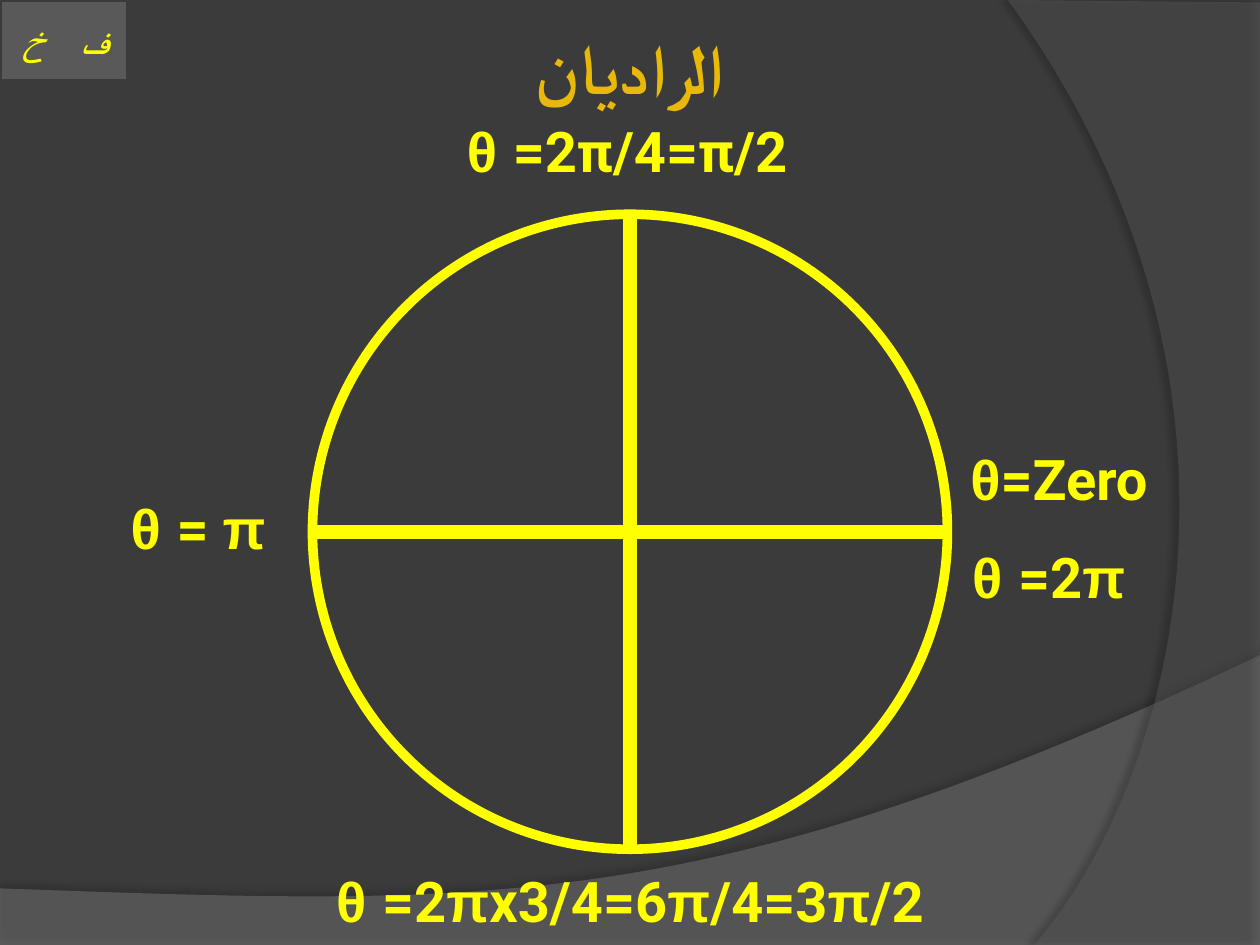
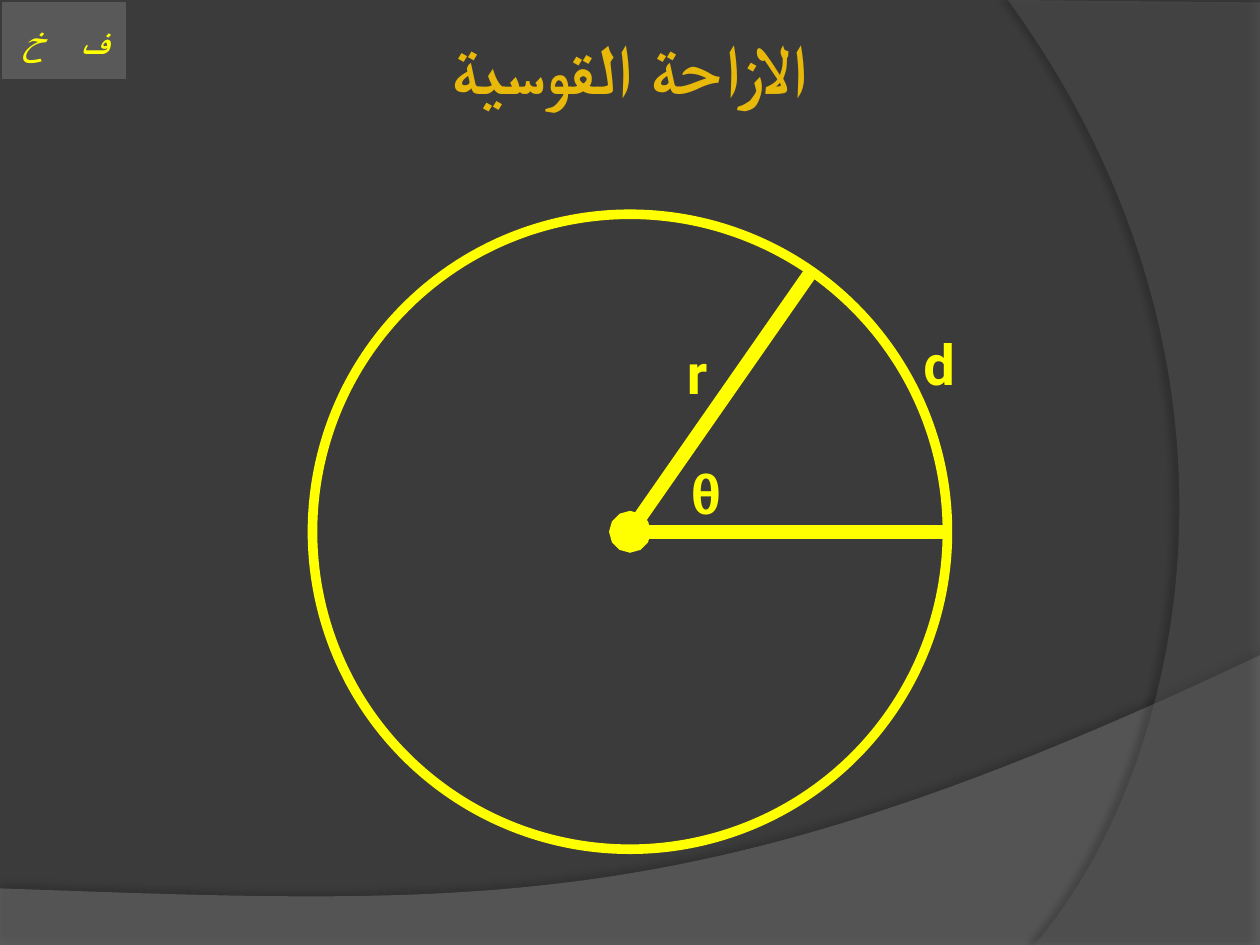
from dataclasses import dataclass

from lxml import etree
from pptx import Presentation
from pptx import util as u
from pptx.dml.color import RGBColor
from pptx.enum import shapes as kind, text as txt
from pptx.oxml.ns import qn


@dataclass(frozen=True)
class Theme:
    back: str = "3B3B3B"
    wave: str = "7F7F7F"
    arc: str = "5E5E5E"
    button: str = "595959"
    ink: str = "FFFF00"
    gold: tuple = ((0, "FFDC75"), (75, "E9B90A"), (100, "9E8700"))
    head: int = 40
    label: int = 32
    small: int = 20
    ring: float = 5.5
    spoke: int = 8
    greek: str = "Arial"
    latin: str = "Roboto"


T = Theme()
WIDE, HIGH = 25.4, 19.05
MID_X, MID_Y, RAD = 12.7, 10.72, 6.4
LEFT, RIGHT = MID_X - RAD, MID_X + RAD
TOP, BASE = MID_Y - RAD, MID_Y + RAD


def cm(*nums):
    return [u.Cm(n) for n in nums]


def rgb(code):
    return RGBColor.from_string(code)


def node(root, tag, **attrs):
    return etree.SubElement(root, qn(tag), {k: str(v) for k, v in attrs.items()})


def grade(run, stops):
    """Fill a run with a downward gradient of (percent, colour) stops."""
    props = run.font.fill and run._r.get_or_add_rPr()
    fill = etree.Element(qn("a:gradFill"))
    chain = node(fill, "a:gsLst")
    for pct, code in stops:
        node(node(chain, "a:gs", pos=pct * 1000), "a:srgbClr", val=code)
    node(fill, "a:lin", ang=90 * 60000)
    props.insert(0, fill)


def write(shape, words, size=T.label, color=T.ink, stops=None, italic=False,
          inset=None, wrap=True, anchor=txt.MSO_ANCHOR.MIDDLE):
    """Write one centred right-to-left line; "|" switches Greek and Latin fonts."""
    frame = shape.text_frame
    frame.auto_size = txt.MSO_AUTO_SIZE.NONE
    frame.word_wrap = wrap
    frame.vertical_anchor = anchor
    if inset is not None:
        frame.margin_left = frame.margin_right = u.Cm(inset)
        frame.margin_top = frame.margin_bottom = u.Cm(inset)
    para = frame.paragraphs[0]
    para.alignment = txt.PP_ALIGN.CENTER
    para._p.get_or_add_pPr().set("rtl", "1")
    for turn, part in enumerate(words.split("|")):
        if not part:
            continue
        run = para.add_run()
        run.text = part
        font = run.font
        font.name = T.latin if turn % 2 else T.greek
        font.size, font.bold, font.italic = u.Pt(size), True, italic
        if stops:
            grade(run, stops)
        else:
            font.color.rgb = rgb(color)
        node(run._r.get_or_add_rPr(), "a:cs", typeface=font.name)


def label(slide, words, *box):
    write(slide.shapes.add_textbox(*cm(*box)), words, inset=0.13)


def title(slide, words):
    head = slide.shapes.title
    head.left, head.top, head.width, head.height = cm(0, 0.36, WIDE, 1.96)
    write(head, "|" + words, size=T.head, stops=T.gold,
          anchor=txt.MSO_ANCHOR.TOP)


def circle(slide):
    ring = slide.shapes.add_shape(kind.MSO_SHAPE.OVAL,
                                  *cm(LEFT, TOP, 2 * RAD, 2 * RAD))
    ring.shadow.inherit = False
    ring.fill.background()
    ring.line.color.rgb = rgb(T.ink)
    ring.line.width = u.Pt(T.ring)


def line(slide, *ends, dot=False):
    bar = slide.shapes.add_connector(kind.MSO_CONNECTOR.STRAIGHT, *cm(*ends))
    bar.line.color.rgb = rgb(T.ink)
    bar.line.width = u.Pt(T.spoke)
    if dot:
        node(bar.line._get_or_add_ln(), "a:tailEnd", type="oval")
    node(bar.element.find(qn("p:spPr")), "a:effectLst")


def curve(a, b, c, d, steps=48):
    """Points along a cubic curve, ends included."""
    for i in range(steps + 1):
        t = i / steps
        s = 1 - t
        yield tuple(s**3 * p + 3 * s * s * t * q + 3 * s * t * t * r + t**3 * e
                    for p, q, r, e in zip(a, b, c, d))


def band(slide, edge, bend, color, alpha, shade, dist, turn):
    """Draw a translucent sheet bounded by straight edges and one curve."""
    spots = [cm(*p) for p in (*edge, *curve(*bend))]
    form = slide.shapes.build_freeform(*spots[0], scale=1.0)
    form.add_line_segments(spots[1:], close=True)
    sheet = form.convert_to_shape()
    sheet.fill.solid()
    sheet.fill.fore_color.rgb = rgb(color)
    sheet.line.fill.background()
    sheet.shadow.inherit = False
    props = sheet.element.spPr
    node(props.find(qn("a:solidFill"))[0], "a:alpha", val=alpha * 1000)
    cast = node(props.find(qn("a:effectLst")), "a:outerShdw", blurRad=u.Pt(4),
                dist=u.Pt(dist), dir=turn * 60000, algn="ctr", rotWithShape=0)
    node(node(cast, "a:srgbClr", val="000000"), "a:alpha", val=shade * 1000)
    return sheet


def button(slide, left, words):
    key = slide.shapes.add_shape(kind.MSO_SHAPE.ACTION_BUTTON_CUSTOM,
                                 *cm(left, 0.05, 1.24, 1.55))
    key.shadow.inherit = False
    key.fill.solid()
    key.fill.fore_color.rgb = rgb(T.button)
    key.line.fill.background()
    write(key, words, size=T.small, italic=True, wrap=False)
    return key


def dress(layout, slide):
    """Draw the shared sheets and buttons, then move them to the layout."""
    wave = band(slide, [(0, HIGH), (WIDE, HIGH)],
                [(WIDE, 13.21), (14.2, 18.52), (9.93, 18.26), (0, 17.91)],
                T.wave, 45, 35, 3.5, 270)
    arc = band(slide, [(WIDE, 0.05), (WIDE, HIGH)],
               [(20.85, HIGH), (23.75, 15.72), (25.86, 7.62), (20.32, 0)],
               T.arc, 40, 45, 4, 180)
    keys = [button(slide, 1.3, "ف"), button(slide, 0.05, "خ")]
    for num, part in enumerate((wave, arc, *keys), 101):
        part.element.find(".//" + qn("p:cNvPr")).set("id", str(num))
        layout.shapes.element.append(part.element)


def radian(slide):
    title(slide, "الراديان")
    circle(slide)
    line(slide, RIGHT, MID_Y, LEFT, MID_Y)
    line(slide, MID_X, TOP, MID_X, BASE)
    label(slide, "θ|=Zero", 18.9, 8.74, 4.9, 1.8)
    label(slide, "θ |=2π/4=π/2", 9.09, 2.13, 7.11, 1.8)
    label(slide, " θ |= |π", 1.7, 9.73, 4.9, 1.8)
    label(slide, "θ |=2|π|x3/4=6|π|/4=3|π|/2", 6.1, 17.25, 13.2, 1.8)
    label(slide, "θ |=2|π", 18.69, MID_Y, 4.9, 1.8)


def shift(slide):
    title(slide, "الازاحة القوسية")
    circle(slide)
    line(slide, RIGHT, MID_Y, MID_X, MID_Y, dot=True)
    line(slide, 16.31, 5.54, MID_X, MID_Y)
    for words, left, top in (("θ", 12.09, 8.33), ("|r", 11.91, 5.92),
                             ("|d", 16.79, 5.74)):
        label(slide, words, left, top, 4.29, 3.18)


def main():
    prs = Presentation()
    prs.slide_width, prs.slide_height = cm(WIDE, HIGH)
    fill = prs.slide_master.background.fill
    fill.solid()
    fill.fore_color.rgb = rgb(T.back)
    layout = prs.slide_layouts[5]
    first, second = (prs.slides.add_slide(layout) for _ in range(2))
    dress(layout, first)
    radian(first)
    shift(second)
    prs.save("out.pptx")


if __name__ == "__main__":
    main()
